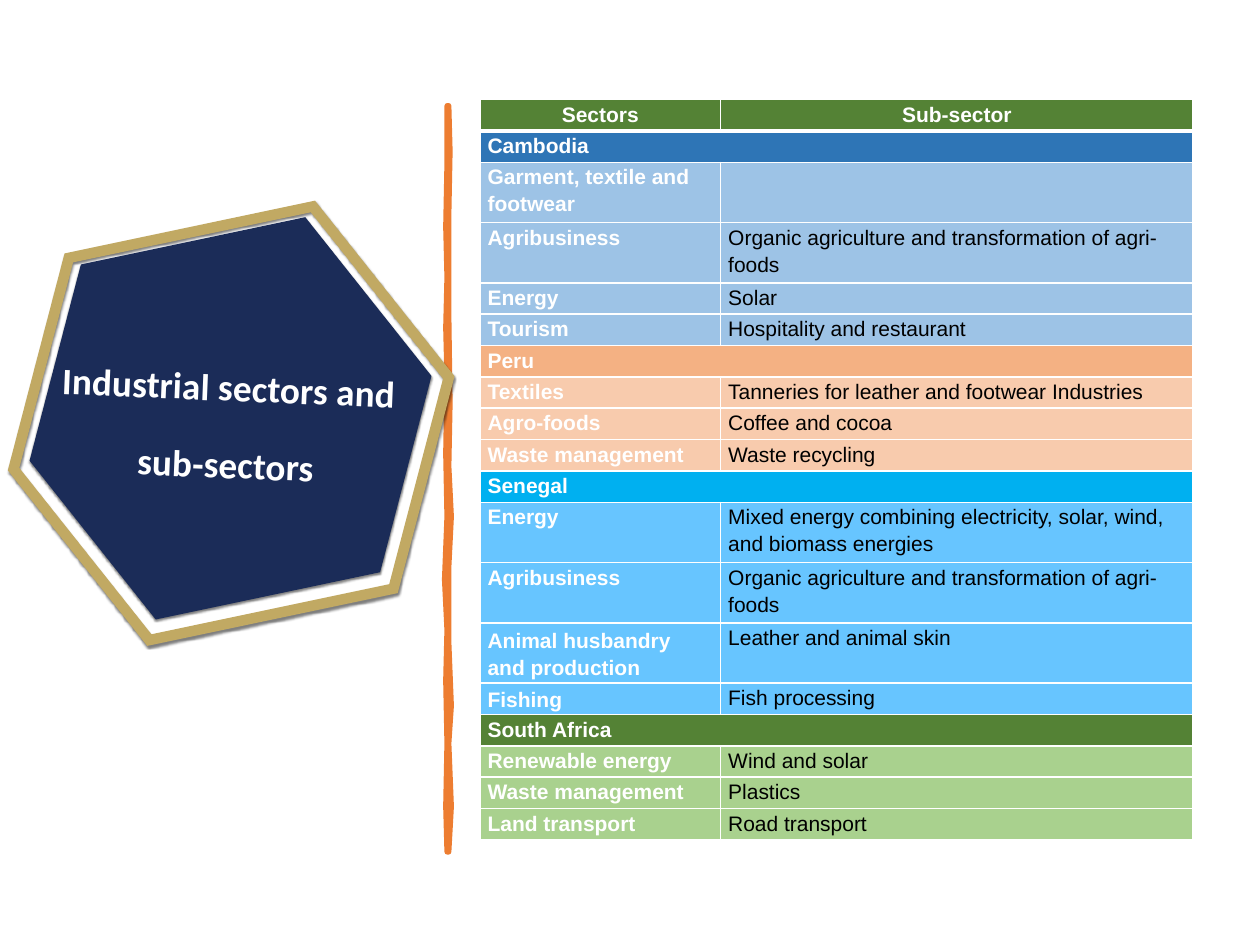
"""Build the slide of industrial sectors and sub-sectors by country."""
from lxml import etree
from pptx import Presentation
from pptx import util as u
from pptx.dml.color import RGBColor
from pptx.enum import shapes, text
from pptx.oxml import ns

HUES = {
    "white": "FFFFFF", "black": "000000", "navy": "1B2C58", "gold": "C1A963",
    "orange": "ED7D31", "green": "548235", "leaf": "A9D18E", "blue": "2E75B6",
    "pale": "9DC3E6", "peach": "F4B183", "cream": "F8CBAD", "cyan": "00B0F0",
    "sky": "67C5FF",
}
SIZE = (10, 7.5)
TITLE = "Industrial sectors and sub-sectors"
HEADS = ("Sectors", "Sub-sector")
FARM = "Organic agriculture and transformation of agri-foods"
LANDS = [
    ("Cambodia", "blue", "pale", [
        ("Garment, textile and footwear", ""),
        ("Agribusiness", FARM),
        ("Energy", "Solar"),
        ("Tourism", "Hospitality and restaurant")]),
    ("Peru", "peach", "cream", [
        ("Textiles", "Tanneries for leather and footwear Industries"),
        ("Agro-foods", "Coffee and cocoa"),
        ("Waste management", "Waste recycling")]),
    ("Senegal", "cyan", "sky", [
        ("Energy", "Mixed energy combining electricity, solar, wind, and biomass energies"),
        ("Agribusiness", FARM),
        ("Animal husbandry and production", "Leather and animal skin"),
        ("Fishing", "Fish processing")]),
    ("South Africa", "green", "leaf", [
        ("Renewable energy", "Wind and solar"),
        ("Waste management", "Plastics"),
        ("Land transport", "Road transport")]),
]
MIDDLE = ("Animal husbandry and production", "Fishing")
COLS = (1.91, 3.75)
LOW, TALL, HIGH = 0.25, 0.48, 5.88
WRAP = (24, 45)
RIGHT = [(3.56, 0.84), (3.57, 1.2), (3.56, 1.7), (3.56, 2.5), (3.57, 3.2),
         (3.56, 3.7), (3.58, 4.1), (3.56, 4.5), (3.56, 5.1), (3.58, 5.6),
         (3.56, 5.9), (3.58, 6.4), (3.56, 6.76)]
LEFT = [(3.55, 6.76), (3.54, 6.4), (3.55, 5.9), (3.54, 5.4), (3.55, 5.0),
        (3.53, 4.6), (3.55, 4.1), (3.54, 3.6), (3.55, 3.0), (3.54, 2.6),
        (3.55, 2.2), (3.54, 1.8), (3.55, 1.3), (3.55, 0.84)]
HEXES = [
    ((0.07, 1.81, 3.53, 3.1), None, "gold"),
    ((0.2, 1.88, 3.26, 2.88), "navy", None),
]


def hue(name):
    return RGBColor.from_string(HUES[name])


def paint(part, name):
    part.solid()
    part.fore_color.rgb = hue(name)


def add(para, words, face, size, name, bold):
    run = para.add_run()
    run.text = words
    font = run.font
    font.name, font.size, font.bold = face, u.Pt(size), bold
    font.color.rgb = hue(name)
    return run


def edge(cell, row):
    for side in "LRTB":
        thick = (row, side) in ((0, "B"), (1, "T"))
        line = etree.SubElement(cell._tc.get_or_add_tcPr(), ns.qn("a:ln" + side),
                                w=str(u.Pt(3 if thick else 1)))
        fill = etree.SubElement(line, ns.qn("a:solidFill"))
        etree.SubElement(fill, ns.qn("a:srgbClr"), val=HUES["white"])


def write(cell, row, words, back, name="white", bold=True):
    edge(cell, row)
    paint(cell.fill, back)
    cell.margin_left = cell.margin_right = u.Inches(0.06)
    cell.margin_top = cell.margin_bottom = 0
    if words in MIDDLE:
        cell.vertical_anchor = text.MSO_ANCHOR.MIDDLE
    para = cell.text_frame.paragraphs[0]
    para.line_spacing = 1.15
    para.alignment = text.PP_ALIGN.LEFT if row else text.PP_ALIGN.CENTER
    if words:
        add(para, words, "Arial", 12, name, bold)


def shade(shape):
    cast = etree.SubElement(shape._element.spPr, ns.qn("a:effectLst"))
    drop = etree.SubElement(cast, ns.qn("a:outerShdw"), blurRad=str(u.Pt(1)),
                            dist=str(u.Pt(1)), dir="5400000", rotWithShape="0")
    tint = etree.SubElement(drop, ns.qn("a:srgbClr"), val=HUES["black"])
    etree.SubElement(tint, ns.qn("a:alpha"), val="49000")


def draw_base(slide):
    base = slide.shapes.add_shape(shapes.MSO_SHAPE.RECTANGLE, 0, 0,
                                  *map(u.Inches, SIZE))
    base.shadow.inherit = False
    paint(base.fill, "white")
    base.line.fill.background()


def draw_rule(slide):
    spots = [(u.Inches(x), u.Inches(y)) for x, y in RIGHT + LEFT]
    pen = slide.shapes.build_freeform(*spots[0])
    pen.add_line_segments(spots[1:], close=True)
    rule = pen.convert_to_shape()
    rule.shadow.inherit = False
    paint(rule.fill, "orange")
    paint(rule.line.fill, "orange")
    rule.line.width = u.Pt(3.25)


def draw_table(slide):
    rows = [(HEADS, "green")]
    for land, dark, light, pairs in LANDS:
        rows.append(((land,), dark))
        rows += [(pair, light) for pair in pairs]
    highs = [TALL if len(words) == 2 and any(
        len(word) > most for word, most in zip(words, WRAP)) else LOW
        for words, _ in rows]
    ratio = HIGH / sum(highs)
    table = slide.shapes.add_table(
        len(rows), 2, u.Inches(3.81), u.Inches(0.79),
        u.Inches(sum(COLS)), u.Inches(HIGH)).table
    table.first_row = table.horz_banding = False
    for col, wide in zip(table.columns, COLS):
        col.width = u.Inches(wide)
    for i, (words, back) in enumerate(rows):
        table.rows[i].height = u.Inches(highs[i] * ratio)
        if len(words) == 1:
            table.cell(i, 0).merge(table.cell(i, 1))
        for j, word in enumerate(words):
            plain = i > 0 and j == 1
            write(table.cell(i, j), i, word, back,
                  "black" if plain else "white", not plain)


def draw_badge(slide):
    for box, fill, line in HEXES:
        six = slide.shapes.add_shape(shapes.MSO_SHAPE.HEXAGON, *map(u.Inches, box))
        six.rotation = 348.1
        six.adjustments[0] = 0.25
        if fill:
            paint(six.fill, fill)
        else:
            six.fill.background()
        if line:
            paint(six.line.fill, line)
            six.line.width = u.Pt(6)
            etree.SubElement(six._element.spPr.find(ns.qn("a:ln")),
                             ns.qn("a:miter"), lim="800000")
        else:
            six.line.fill.background()
        shade(six)
    box = slide.shapes.add_textbox(*map(u.Inches, (0.45, 2.96, 2.7, 0.96)))
    box.rotation = 2.3
    frame = box.text_frame
    frame.word_wrap = True
    frame.vertical_anchor = text.MSO_ANCHOR.MIDDLE
    frame.margin_left = frame.margin_right = u.Inches(0.02)
    frame.margin_top = frame.margin_bottom = u.Inches(0.02)
    para = frame.paragraphs[0]
    para.alignment = text.PP_ALIGN.CENTER
    run = add(para, TITLE, "Calibri", 36.8, "white", True)
    run.font._element.set("baseline", "30000")


def main():
    deck = Presentation()
    deck.slide_width, deck.slide_height = map(u.Inches, SIZE)
    slide = deck.slides.add_slide(deck.slide_layouts[6])
    paint(slide.background.fill, "white")
    draw_base(slide)
    draw_rule(slide)
    draw_table(slide)
    draw_badge(slide)
    deck.save("out.pptx")


if __name__ == "__main__":
    main()
